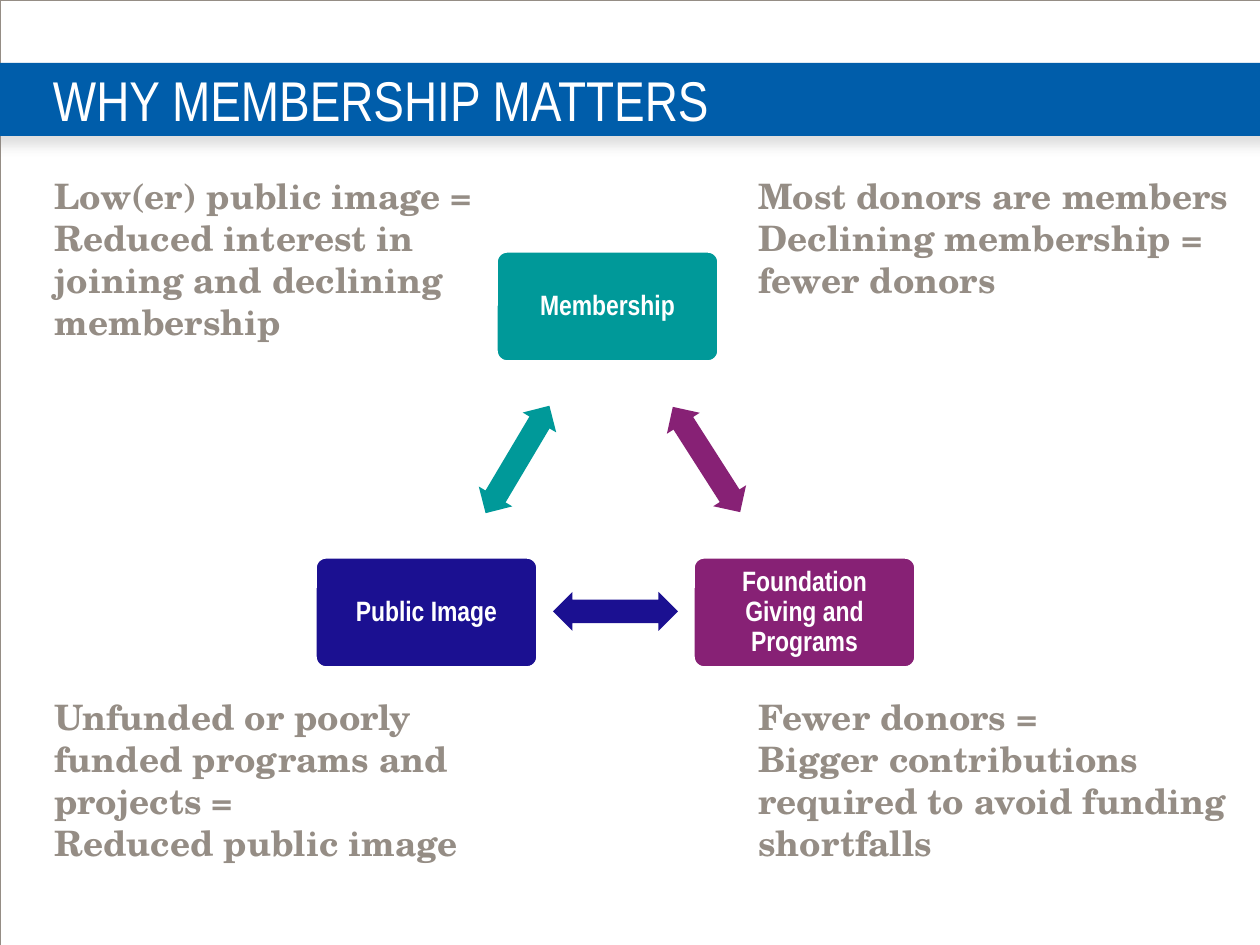
from lxml import etree
from pptx import Presentation
from pptx.dml.color import RGBColor
from pptx.enum.shapes import MSO_SHAPE as Preset
from pptx.enum.text import MSO_ANCHOR as Anchor, MSO_AUTO_SIZE as AutoSize, PP_ALIGN as Align
from pptx.oxml.ns import nsdecls
from pptx.util import Emu, Pt

# Content: lengths in px, 126 to the inch
SLIDE_SIZE = (1260, 945)
TITLE = "WHY MEMBERSHIP MATTERS"
TITLE_BOX = (53, 63, 1207, 73)
BAND_BOX = (-10, 63, 1281, 73)

NOTE_LEFT, NOTE_RIGHT, NOTE_TOP, NOTE_BOTTOM = 42, 746, 168, 689
NOTES = [  # left, top, width, height, paragraphs (\v breaks a line)
    (NOTE_RIGHT, NOTE_TOP, 507, 140,
     ["Most donors are members", "Declining membership = fewer donors"]),
    (NOTE_RIGHT, NOTE_BOTTOM, 494, 183,
     ["Fewer donors =", "Bigger contributions required to avoid funding shortfalls"]),
    (NOTE_LEFT, NOTE_BOTTOM, 431, 183,
     ["Unfunded or poorly\vfunded programs and projects =\vReduced public image"]),
    (NOTE_LEFT, NOTE_TOP, 462, 183,
     ["Low(er) public image = Reduced interest in joining and declining membership"]),
]

NODE_SIZE, ARROW_SIZE = (223, 111), (125, 39)
CYCLE = [  # label, colour, node left and top, arrow left and top, arrow rotation
    ("Membership", "teal", (496, 251), (455, 440), 120.7),
    ("Public Image", "navy", (315, 557), (553, 592), 0),
    ("Foundation Giving and Programs", "plum", (693, 557), (644, 440), 237.4),
]

THEME = {
    "colors": {"white": "FFFFFF", "gray": "958D85", "blue": "005DAA",
               "teal": "009999", "navy": "1B1091", "plum": "872175"},
    "title": {"name": "Arial Narrow", "size": Pt(32), "bold": False, "color": "white"},
    "note": {"name": "TeX Gyre Schola", "size": Pt(20), "bold": True, "color": "gray"},
    "node": {"name": "Arial Narrow", "size": Pt(16), "bold": True, "color": "white"},
}
SHADOW = (f'<a:effectLst {nsdecls("a")}><a:outerShdw blurRad="{Pt(7)}" dist="{Pt(4.8)}" '
          'dir="5400000" algn="t" rotWithShape="0"><a:srgbClr val="808080">'
          '<a:alpha val="25000"/></a:srgbClr></a:outerShdw></a:effectLst>')


def px(*lengths):
    return [Emu(round(length * 914400 / 126)) for length in lengths]


def color(name):
    return RGBColor.from_string(THEME["colors"][name])


def style_font(paragraph, style):
    for key, value in THEME[style].items():
        if key == "color":
            paragraph.font.color.rgb = color(value)
        else:
            setattr(paragraph.font, key, value)


def set_frame(frame, anchor, inset=None, auto_size=AutoSize.NONE):
    frame.word_wrap, frame.auto_size, frame.vertical_anchor = True, auto_size, anchor
    if inset is not None:
        for side in ("left", "right", "top", "bottom"):
            setattr(frame, f"margin_{side}", px(inset)[0])


def add_shape(slide, preset, box, fill=None, line=None, line_width=0):
    shape = slide.shapes.add_shape(preset, *px(*box))
    shape.shadow.inherit = False
    if fill:
        shape.fill.solid()
        shape.fill.fore_color.rgb = color(fill)
    else:
        shape.fill.background()
    if line:
        shape.line.color.rgb = color(line)
        shape.line.width = Pt(line_width)
    else:
        shape.line.fill.background()
    return shape


def add_header(slide):
    frame = add_shape(slide, Preset.RECTANGLE, (0, 0, *SLIDE_SIZE), None, "gray", 0.13)
    band = add_shape(slide, Preset.RECTANGLE, BAND_BOX, "blue")
    band.shadow.inherit = True
    band.element.spPr.append(etree.fromstring(SHADOW))
    title = slide.shapes.title
    for backdrop in (frame, band):  # keep both behind the title
        title.element.addprevious(backdrop.element)
    title.left, title.top, title.width, title.height = px(*TITLE_BOX)
    title.text_frame.text = TITLE
    set_frame(title.text_frame, Anchor.MIDDLE, 0)
    paragraph = title.text_frame.paragraphs[0]
    paragraph.alignment = Align.LEFT
    style_font(paragraph, "title")


def add_note(slide, left, top, width, height, lines):
    frame = slide.shapes.add_textbox(*px(left, top, width, height)).text_frame
    set_frame(frame, Anchor.TOP, auto_size=AutoSize.SHAPE_TO_FIT_TEXT)
    frame.text = "\n".join(lines)
    for paragraph in frame.paragraphs:
        style_font(paragraph, "note")


def add_cycle_step(slide, label, fill, node_at, arrow_at, rotation):
    node = add_shape(slide, Preset.ROUNDED_RECTANGLE, (*node_at, *NODE_SIZE), fill, "white", 2)
    node.adjustments[0] = 0.1
    node.text_frame.text = label
    set_frame(node.text_frame, Anchor.MIDDLE, 11)
    paragraph = node.text_frame.paragraphs[0]
    paragraph.alignment, paragraph.line_spacing = Align.CENTER, 0.9
    style_font(paragraph, "node")

    arrow = add_shape(slide, Preset.LEFT_RIGHT_ARROW, (*arrow_at, *ARROW_SIZE), fill)
    arrow.adjustments[0], arrow.adjustments[1] = 0.6, 0.5
    arrow.rotation = rotation


def main():
    presentation = Presentation()
    presentation.slide_width, presentation.slide_height = px(*SLIDE_SIZE)
    slide = presentation.slides.add_slide(presentation.slide_layouts[5])
    add_header(slide)
    for note in NOTES:
        add_note(slide, *note)
    for step in CYCLE:
        add_cycle_step(slide, *step)
    presentation.save("out.pptx")


if __name__ == "__main__":
    main()
